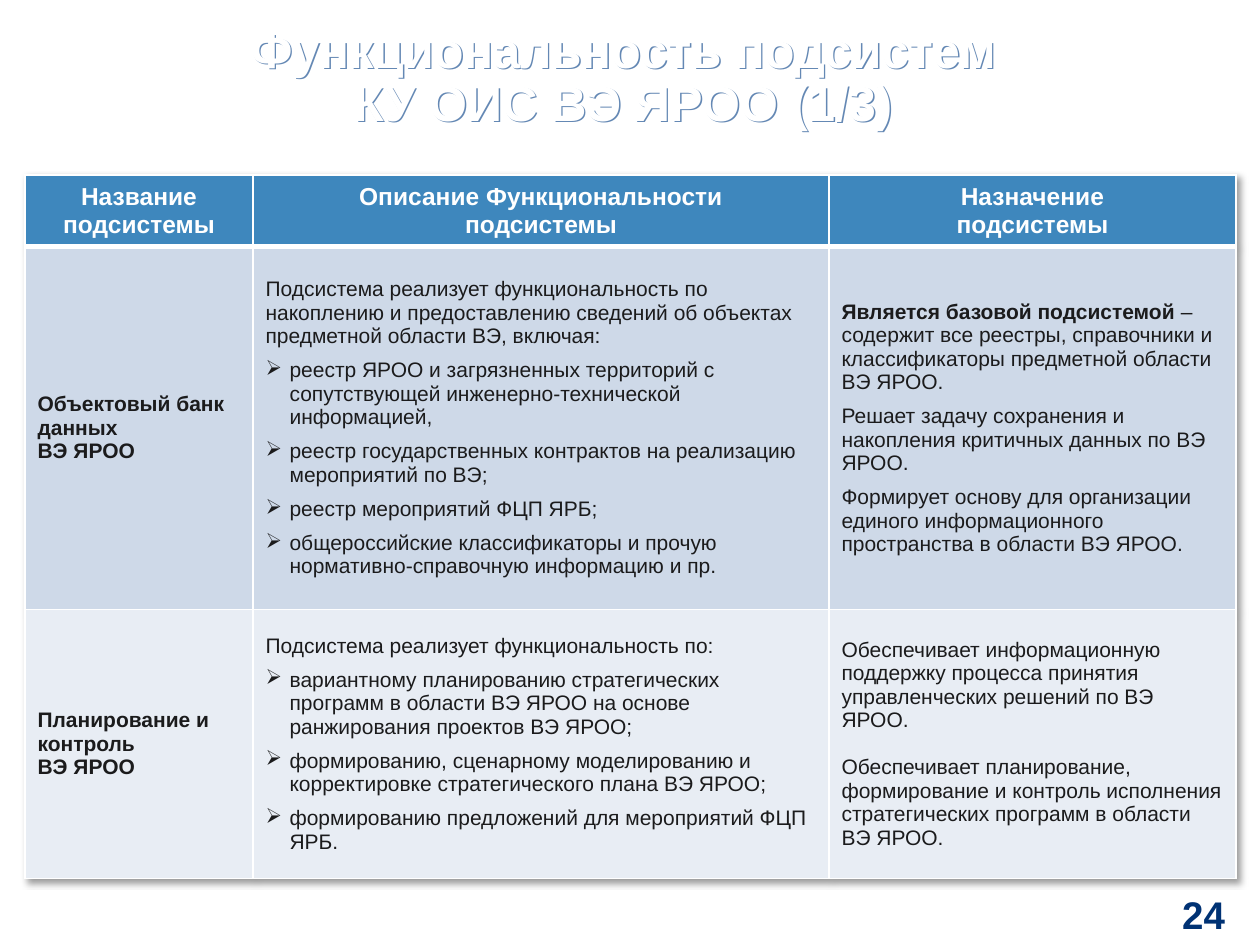
import pptx
import pptx.dml.color
import pptx.enum.text
import pptx.oxml
import pptx.oxml.ns
import pptx.util

EMU_PER_PX = 914400 / 126
COLORS = {
    "white": "FFFFFF",
    "header": "3E87BD",
    "odd_row": "CED9E8",
    "even_row": "E8EDF4",
    "ink": "1B1B1C",
    "navy": "003274",
    "title_shadow": "6488B4",
    "table_shadow": "000000",
}
ALIGN = pptx.enum.text.PP_ALIGN
MIDDLE = pptx.enum.text.MSO_ANCHOR.MIDDLE
NAMESPACE = pptx.oxml.ns.nsdecls("a")


def emu(px):
    return round(px * EMU_PER_PX)


def rgb(name):
    return pptx.dml.color.RGBColor.from_string(COLORS[name])


class SlideBuilder:
    """Holds the style and the current slide."""

    font = "Arial"
    indent = 24

    def __init__(self, deck):
        self.page = deck.slides.add_slide(deck.slide_layouts[6])

    def style(self, font, size, color, bold):
        font.name, font.size, font.bold = self.font, pptx.util.Pt(size), bold
        font.color.rgb = rgb(color)

    def shadow(self, color, blur, distance, alpha):
        return pptx.oxml.parse_xml(
            f'<a:effectLst {NAMESPACE}><a:outerShdw blurRad="{emu(blur)}" '
            f'dist="{emu(distance)}" dir="2700000" algn="tl" rotWithShape="0">'
            f'<a:srgbClr val="{COLORS[color]}"><a:alpha val="{alpha * 1000}"/>'
            f'</a:srgbClr></a:outerShdw></a:effectLst>')

    def text(self, left, top, width, height, words, size, color, align):
        box = self.page.shapes.add_textbox(*map(emu, (left, top, width, height)))
        frame = box.text_frame
        frame.word_wrap, frame.vertical_anchor = True, MIDDLE
        frame.margin_left = frame.margin_right = 0
        frame.margin_top = frame.margin_bottom = 0
        frame.text = words
        para = frame.paragraphs[0]
        para.alignment = align
        self.style(para.runs[0].font, size, color, True)
        return box

    def bullet(self, para):
        properties = para._p.get_or_add_pPr()
        properties.set("marL", str(emu(self.indent)))
        properties.set("indent", str(-emu(self.indent)))
        properties.append(pptx.oxml.parse_xml(f'<a:buChar {NAMESPACE} char="➢"/>'))

    def borders(self, cell, bottom):
        properties = cell._tc.get_or_add_tcPr()
        widths = {"lnL": 1, "lnR": 1, "lnT": 1, "lnB": bottom}
        for position, (side, width) in enumerate(widths.items()):
            properties.insert(position, pptx.oxml.parse_xml(
                f'<a:{side} {NAMESPACE} w="{width * 12700}"><a:solidFill>'
                f'<a:srgbClr val="{COLORS["white"]}"/></a:solidFill></a:{side}>'))

    def cell(self, cell, paragraphs, fill, size, color, bold, align, gap, bottom=1):
        cell.fill.solid()
        cell.fill.fore_color.rgb = rgb(fill)
        cell.vertical_anchor = MIDDLE
        self.borders(cell, bottom)
        frame = cell.text_frame
        for index, words in enumerate(paragraphs):
            para = frame.add_paragraph() if index else frame.paragraphs[0]
            # "➢" opens a list item; "**" switches bold
            if words.startswith("➢"):
                self.bullet(para)
            para.alignment = align
            para.space_before = pptx.util.Pt(gap if index else 0)
            for part, piece in enumerate(words.removeprefix("➢").split("**")):
                if piece:
                    span = para.add_run()
                    span.text = piece
                    self.style(span.font, size, color, bold or part % 2 == 1)

    def table(self, left, top, columns, rows):
        frame = self.page.shapes.add_table(
            len(rows), len(columns), emu(left), emu(top),
            emu(sum(columns)), emu(sum(rows)))
        table = frame.table
        table.first_row = table.horz_banding = False
        for column, width in zip(table.columns, columns):
            column.width = emu(width)
        for row, height in zip(table.rows, rows):
            row.height = emu(height)
        table._tbl.tblPr.insert(0, self.shadow("table_shadow", 6, 5, 40))
        return table


HEADERS = [
    ["Название подсистемы"],
    ["Описание Функциональности", "подсистемы"],
    ["Назначение", "подсистемы"],
]
# Each subsystem: name, functions, purpose
SUBSYSTEMS = [
    (["Объектовый банк данных", "ВЭ ЯРОО"],
     ["Подсистема реализует функциональность по накоплению и предоставлению "
      "сведений об объектах предметной области ВЭ, включая:",
      "➢реестр ЯРОО и загрязненных территорий с сопутствующей "
      "инженерно-технической информацией,",
      "➢реестр государственных контрактов на реализацию мероприятий по ВЭ;",
      "➢реестр мероприятий ФЦП ЯРБ;",
      "➢общероссийские классификаторы и прочую нормативно-справочную "
      "информацию и пр."],
     ["**Является базовой подсистемой** – содержит все реестры, справочники и "
      "классификаторы предметной области ВЭ ЯРОО.",
      "Решает задачу сохранения и накопления критичных данных по ВЭ ЯРОО.",
      "Формирует основу для организации единого информационного пространства "
      "в области ВЭ ЯРОО."]),
    (["Планирование и контроль", "ВЭ ЯРОО"],
     ["Подсистема реализует функциональность по:",
      "➢вариантному планированию стратегических программ в области ВЭ ЯРОО "
      "на основе ранжирования проектов ВЭ ЯРОО;",
      "➢формированию, сценарному моделированию и корректировке "
      "стратегического плана ВЭ ЯРОО;",
      "➢формированию предложений для мероприятий ФЦП ЯРБ."],
     ["Обеспечивает информационную поддержку процесса принятия управленческих "
      "решений по ВЭ ЯРОО.",
      "Обеспечивает планирование, формирование и контроль исполнения "
      "стратегических программ в области ВЭ ЯРОО."]),
]
# Space between paragraphs in points, by row and column
GAPS = [(0, 6, 6), (0, 6, 13.5)]


def main():
    deck = pptx.Presentation()
    deck.slide_width, deck.slide_height = emu(1260), emu(945)
    slide = SlideBuilder(deck)

    # Title
    title = slide.text(243, 0, 760, 158,
                       "Функциональность подсистем КУ ОИС ВЭ ЯРОО (1/3)",
                       28, "white", ALIGN.CENTER)
    title.text_frame.paragraphs[0].line_spacing = 0.9
    title._element.spPr.append(slide.shadow("title_shadow", 0, 2, 100))

    # Page number
    slide.text(1148, 888, 77, 52, "24", 22, "navy", ALIGN.RIGHT)

    # Table of subsystems
    table = slide.table(25, 175, [228, 576, 407], [67, 363, 269])
    for column, words in enumerate(HEADERS):
        slide.cell(table.cell(0, column), words, "header", 14, "white", True,
                   ALIGN.CENTER, 0, bottom=3)
    for row, (subsystem, gaps) in enumerate(zip(SUBSYSTEMS, GAPS), 1):
        fill = "odd_row" if row % 2 else "even_row"
        for column, (words, gap) in enumerate(zip(subsystem, gaps)):
            slide.cell(table.cell(row, column), words, fill, 12, "ink",
                       column == 0, ALIGN.LEFT, gap)

    deck.save("out.pptx")


if __name__ == "__main__":
    main()
